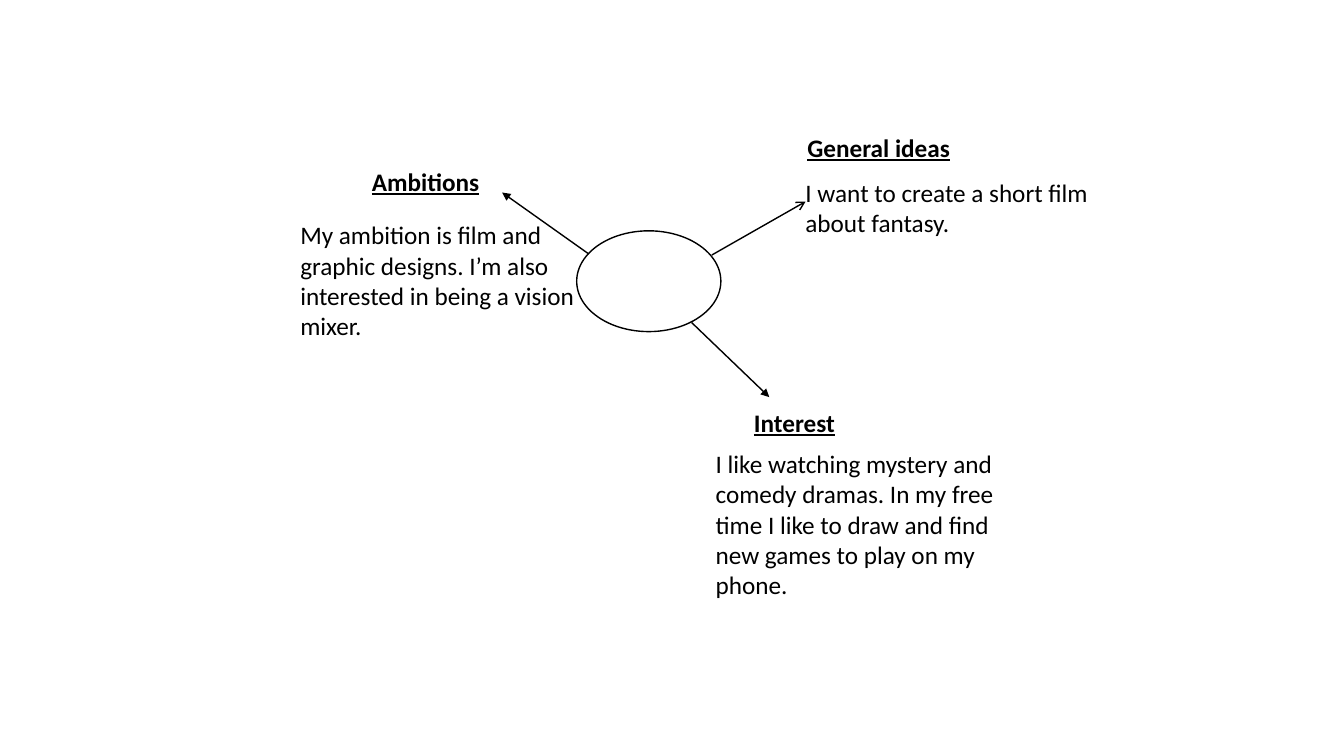
from collections import namedtuple
from dataclasses import dataclass

from pptx import Presentation
from pptx.dml.color import RGBColor
from pptx.enum import shapes, text
from pptx.oxml import parse_xml
from pptx.oxml.ns import nsdecls, qn
from pptx.util import Inches, Pt


@dataclass(frozen=True)
class Theme:
    ink: RGBColor = RGBColor(0, 0, 0)
    paper: RGBColor = RGBColor(255, 255, 255)
    font: str = "Calibri"
    size: int = 18
    line: int = 1


THEME = Theme()
Box = namedtuple("Box", "left top width height")
Branch = namedtuple("Branch", "heading idea box indent heading_width drop start end head")

HEADING_HEIGHT = 0.4
IDEA_WIDTH = 3

BRANCHES = [
    Branch("Interest",
           "I like watching mystery and comedy dramas. In my free time "
           "I like to draw and find new games to play on my phone.",
           Box(7, 3.99, IDEA_WIDTH, 2.03), 0.38, 1.06, 0.41,
           (6.86, 3.2), (7.63, 3.94), "triangle"),
    Branch("Ambitions",
           "My ambition is film and graphic designs. "
           "I’m also interested in being a vision mixer.",
           Box(2.88, 1.6, IDEA_WIDTH, 1.84), 0.71, 1.72, 0.53,
           (5.84, 2.52), (4.98, 1.91), "triangle"),
    Branch("General ideas",
           "I want to create a short film about fantasy.",
           Box(7.89, 1.26, IDEA_WIDTH, 1.16), 0.02, 1.72, 0.45,
           (7.06, 2.53), (7.99, 2), "arrow"),
]


def add_hub(slide, box):
    hub = slide.shapes.add_shape(shapes.MSO_SHAPE.OVAL, *map(Inches, box))
    hub.shadow.inherit = False
    hub.fill.solid()
    hub.fill.fore_color.rgb = THEME.paper
    hub.line.color.rgb = THEME.ink
    hub.line.width = Pt(THEME.line)


def add_arrow(slide, start, end, head):
    arrow = slide.shapes.add_connector(
        shapes.MSO_CONNECTOR.STRAIGHT, *map(Inches, start + end))
    arrow.line.color.rgb = THEME.ink
    arrow.line.width = Pt(THEME.line)
    properties = arrow._element.spPr
    properties.find(qn("a:ln")).append(
        parse_xml(f'<a:tailEnd {nsdecls("a")} type="{head}"/>'))
    properties.append(parse_xml(f'<a:effectLst {nsdecls("a")}/>'))


def add_words(slide, box, words, heading=False):
    frame = slide.shapes.add_textbox(*map(Inches, box)).text_frame
    frame.word_wrap = True
    frame.auto_size = text.MSO_AUTO_SIZE.SHAPE_TO_FIT_TEXT
    frame.text = words
    font = frame.paragraphs[0].runs[0].font
    font.name = THEME.font
    font.size = Pt(THEME.size)
    font.color.rgb = THEME.ink
    if heading:
        font.bold = True
        font.underline = True


def add_branch(slide, branch):
    box = branch.box
    add_arrow(slide, branch.start, branch.end, branch.head)
    add_words(slide,
              Box(box.left + branch.indent, box.top, branch.heading_width, HEADING_HEIGHT),
              branch.heading, heading=True)
    add_words(slide,
              Box(box.left, box.top + branch.drop, box.width, box.height - branch.drop),
              branch.idea)


def main():
    deck = Presentation()
    deck.slide_width = Inches(13.33)
    deck.slide_height = Inches(7.5)
    slide = deck.slides.add_slide(deck.slide_layouts[6])
    add_hub(slide, Box(5.72, 2.29, 1.43, 1))
    for branch in BRANCHES:
        add_branch(slide, branch)
    deck.save("out.pptx")


if __name__ == "__main__":
    main()
